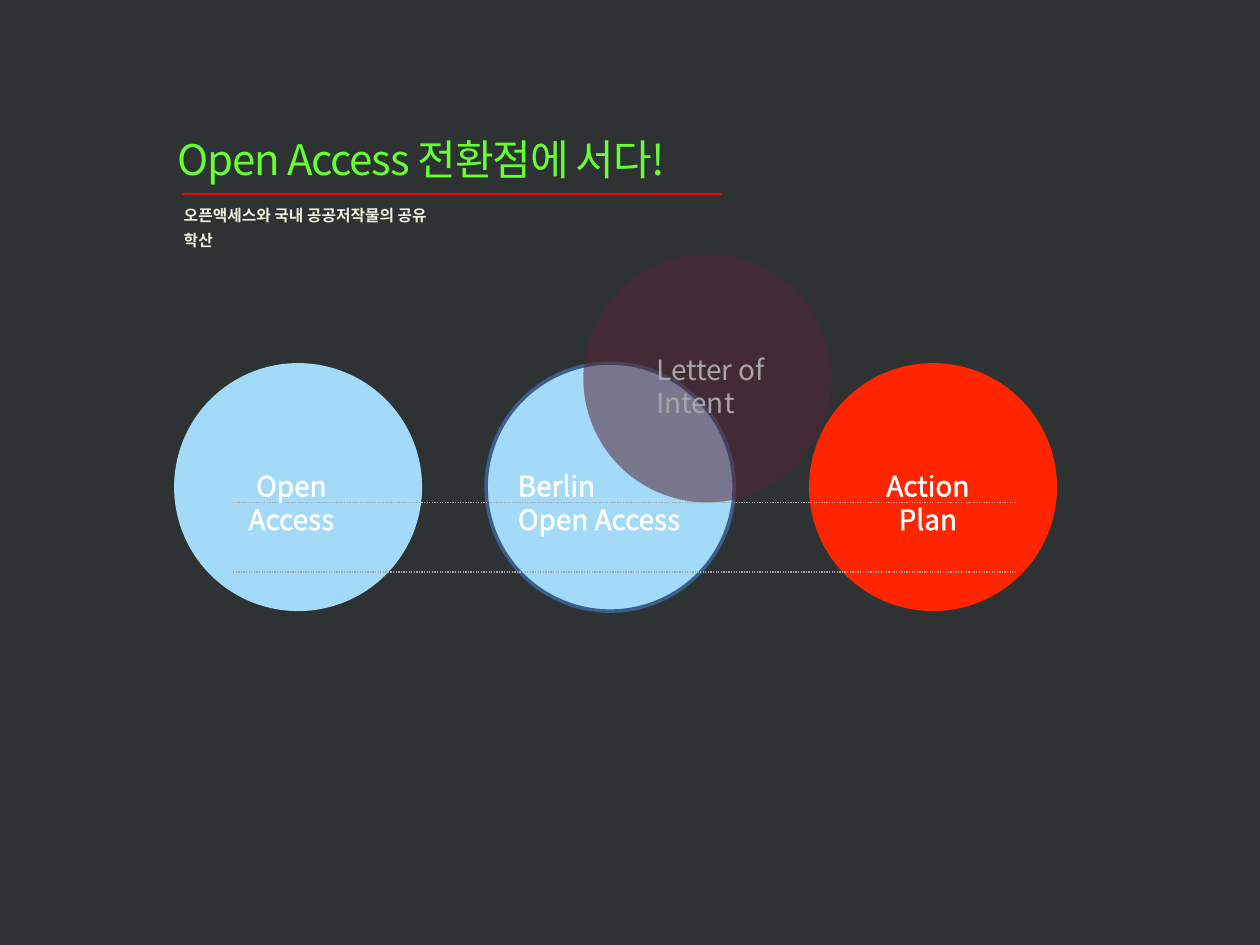
"""Build the Open Access turning point slide."""
from lxml import etree
from pptx import Presentation
from pptx.dml.color import RGBColor
from pptx.enum.dml import MSO_LINE
from pptx.enum.shapes import MSO_CONNECTOR, MSO_SHAPE
from pptx.enum.text import MSO_ANCHOR, MSO_AUTO_SIZE, PP_ALIGN
from pptx.oxml.ns import qn
from pptx.util import Cm, Pt

LEFT, MID, JUST = PP_ALIGN.LEFT, PP_ALIGN.CENTER, PP_ALIGN.JUSTIFY
OVAL, LINE, DOTS = MSO_SHAPE.OVAL, MSO_CONNECTOR.STRAIGHT, MSO_LINE.ROUND_DOT
TOP, FIXED = MSO_ANCHOR.TOP, MSO_AUTO_SIZE.NONE

FACE = "Noto Sans CJK KR"
DARK = RGBColor(0x2E, 0x32, 0x32)
GREEN = RGBColor(0x66, 0xFF, 0x33)
CREAM = RGBColor(0xEB, 0xF1, 0xDE)
WHITE = RGBColor(0xFF, 0xFF, 0xFF)
GREY = RGBColor(0xA6, 0xA6, 0xA6)
SKY = RGBColor(0xA2, 0xDA, 0xF8)
NAVY = RGBColor(0x3A, 0x5F, 0x8C)
PLUM = RGBColor(0x56, 0x27, 0x38)
RED = RGBColor(0xFF, 0x00, 0x00)
FLAME = RGBColor(0xFE, 0x25, 0x00)

TITLE = "Open Access 전환점에 서다!"
SUB = "오픈액세스와 국내 공공저작물의 공유 학산"
SIZE, ROW, RAISED = 5, 7.32, 5.13
DISCS = [
    (3.51, ROW, SKY, None, None),
    (9.8, ROW, SKY, NAVY, None),
    (11.76, RAISED, PLUM, None, 55),
    (16.31, ROW, FLAME, None, None),
]
RULES = [
    (3.66, 14.55, 3.91, RED, None),
    (4.7, 20.5, 11.53, GREY, DOTS),
    (4.7, 20.5, 10.13, GREY, DOTS),
]
LABELS = [
    (4.34, 9.32, 3.07, ["Open Access"], MID, WHITE, 0.75),
    (10.19, 9.32, 4.32, ["Berlin ", "Open Access"], LEFT, WHITE, 0.75),
    (12.98, 6.98, 4.32, ["Letter of Intent"], LEFT, GREY, 0),
    (17.17, 9.32, 3.07, ["Action Plan"], MID, WHITE, 0.75),
]


def place(box, x, y, w, h):
    """Move and size a shape, in centimetres."""
    box.left, box.top, box.width, box.height = Cm(x), Cm(y), Cm(w), Cm(h)


def write(box, lines, size, color, align, edge=0, bold=False):
    """Fill a text frame and format its paragraphs."""
    frame = box.text_frame
    frame.text = "\n".join(lines)
    frame.word_wrap, frame.auto_size = True, FIXED
    frame.vertical_anchor = TOP
    for para in frame.paragraphs:
        para.alignment, para.space_before = align, Pt(0)
        font = para.font
        font.name, font.size, font.bold = FACE, Pt(size), bold
        font.color.rgb = color
        props = para._p.pPr.find(qn("a:defRPr"))
        asian = etree.Element(qn("a:ea"), typeface=FACE)
        props.find(qn("a:latin")).addnext(asian)
        if edge:
            line = etree.Element(qn("a:ln"), w=str(Pt(edge)))
            fill = etree.SubElement(line, qn("a:solidFill"))
            etree.SubElement(fill, qn("a:srgbClr"), val=str(color))
            props.insert(0, line)


def rule(x, end, y, color, dash):
    """Draw a level line."""
    line = shapes.add_connector(LINE, Cm(x), Cm(y), Cm(end), Cm(y))
    line.line.color.rgb, line.line.width = color, Pt(0.75)
    if dash:
        line.line.dash_style = dash
    etree.SubElement(line._element.spPr, qn("a:effectLst"))


def disc(x, y, color, edge, alpha):
    """Draw a circle with an optional edge and opacity."""
    oval = shapes.add_shape(OVAL, Cm(x), Cm(y), Cm(SIZE), Cm(SIZE))
    oval.shadow.inherit = False
    oval.fill.solid()
    oval.fill.fore_color.rgb = color
    if edge:
        oval.line.color.rgb, oval.line.width = edge, Pt(2)
    else:
        oval.line.fill.background()
    if alpha:
        tint = oval._element.spPr.find(qn("a:solidFill"))[0]
        etree.SubElement(tint, qn("a:alpha"), val=str(alpha * 1000))


deck = Presentation()
deck.slide_width, deck.slide_height = Cm(25.4), Cm(19.05)
slide = deck.slides.add_slide(deck.slide_layouts[0])
shapes = slide.shapes
slide.background.fill.solid()
slide.background.fill.fore_color.rgb = DARK

title, sub = slide.placeholders
place(title, 3.33, 2.57, 11.4, 1.27)
write(title, [TITLE], 24, GREEN, JUST, 0.25)
title.text_frame.paragraphs[0]._p.pPr.find(qn("a:defRPr")).set("spc", "-70")
place(sub, 3.45, 3.91, 5.92, 0.76)
write(sub, [SUB], 9, CREAM, LEFT, bold=True)
sub.text_frame.paragraphs[0].line_spacing = Pt(14)

rule(*RULES[0])
for item in DISCS:
    disc(*item)
for item in RULES[1:]:
    rule(*item)
for x, y, w, lines, align, color, edge in LABELS:
    label = shapes.add_textbox(Cm(x), Cm(y), Cm(w), Cm(1.63))
    write(label, lines, 16, color, align, edge)

deck.save("out.pptx")
